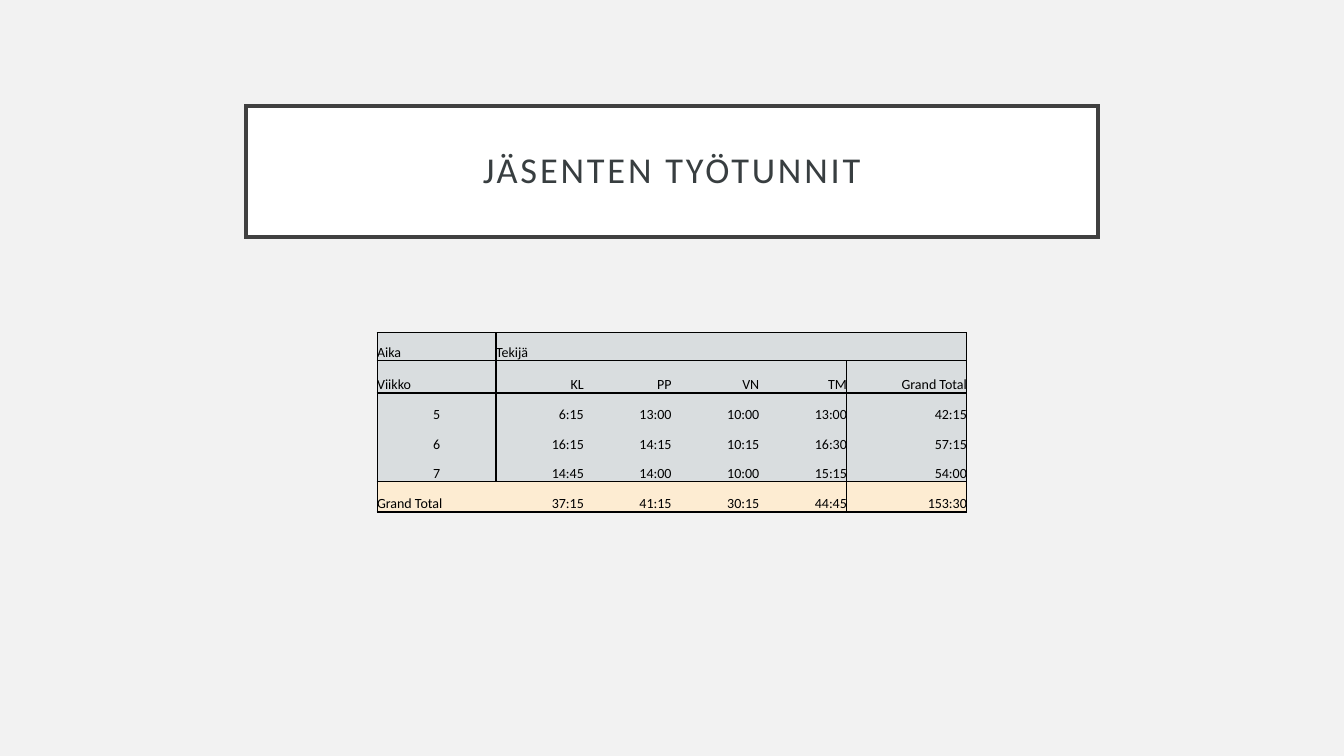
from dataclasses import dataclass

from lxml import etree
from pptx import Presentation
from pptx.dml.color import RGBColor
from pptx.enum.text import MSO_ANCHOR, MSO_AUTO_SIZE, PP_ALIGN
from pptx.oxml.ns import qn
from pptx.slide import Slide
from pptx.table import _Cell
from pptx.util import Inches, Pt

LEFT, CENTER, RIGHT = PP_ALIGN.LEFT, PP_ALIGN.CENTER, PP_ALIGN.RIGHT
MIDDLE, BOTTOM = MSO_ANCHOR.MIDDLE, MSO_ANCHOR.BOTTOM
NO_AUTOFIT = MSO_AUTO_SIZE.NONE

BACKGROUND = RGBColor(0xF2, 0xF2, 0xF2)
WHITE = RGBColor(0xFF, 0xFF, 0xFF)
BLACK = RGBColor(0x00, 0x00, 0x00)
FRAME = RGBColor(0x40, 0x40, 0x40)
TITLE_TEXT = RGBColor(0x38, 0x3E, 0x40)
GREY = RGBColor(0xD9, 0xDD, 0xDF)
CREAM = RGBColor(0xFD, 0xEC, 0xD2)

FONT = "Calibri"
MARGINS = ("margin_left", "margin_right", "margin_top", "margin_bottom")
COLUMN_WIDTHS = (1.18, 0.87, 0.87, 0.87, 0.87, 1.19)
LAST_COLUMN = len(COLUMN_WIDTHS) - 1


@dataclass(frozen=True)
class HoursRow:
    texts: tuple[str, ...]
    height: float
    alignments: tuple[PP_ALIGN, PP_ALIGN] = (CENTER, RIGHT)
    fill: RGBColor = GREY
    horizontal_borders: str = ""
    label_divider: bool = True
    total_divider: bool = True


HOURS_ROWS = (
    HoursRow(("Aika", "Tekijä", "", "", "", ""), 0.28, (LEFT, LEFT),
             horizontal_borders="TB", total_divider=False),
    HoursRow(("Viikko", "KL", "PP", "VN", "TM", "Grand Total"), 0.32, (LEFT, RIGHT),
             horizontal_borders="TB"),
    HoursRow(("5", "6:15", "13:00", "10:00", "13:00", "42:15"), 0.3, horizontal_borders="T"),
    HoursRow(("6", "16:15", "14:15", "10:15", "16:30", "57:15"), 0.3),
    HoursRow(("7", "14:45", "14:00", "10:00", "15:15", "54:00"), 0.28, horizontal_borders="B"),
    HoursRow(("Grand Total", "37:15", "41:15", "30:15", "44:45", "153:30"), 0.3, (LEFT, RIGHT),
             CREAM, "TB", label_divider=False),
)


def apply_format(target: object, values: dict[str, object]) -> None:
    for name, value in values.items():
        setattr(target, name, value)


def border_sides(row: HoursRow, column: int) -> str:
    sides = row.horizontal_borders
    if column == 0 or (column == 1 and row.label_divider) or (
            column == LAST_COLUMN and row.total_divider):
        sides += "L"
    if column == LAST_COLUMN or (column == 0 and row.label_divider) or (
            column == LAST_COLUMN - 1 and row.total_divider):
        sides += "R"
    return sides


def set_borders(cell: _Cell, sides: str) -> None:
    properties = cell._tc.get_or_add_tcPr()
    for position, side in enumerate("LRTB"):
        line = etree.Element(qn(f"a:ln{side}"), w=str(Pt(1)))
        if side in sides:
            fill = etree.SubElement(line, qn("a:solidFill"))
            etree.SubElement(fill, qn("a:srgbClr"), val=str(BLACK))
        else:
            etree.SubElement(line, qn("a:noFill"))
        properties.insert(position, line)


def fill_cell(cell: _Cell, row: HoursRow, column: int) -> None:
    apply_format(cell, {"vertical_anchor": BOTTOM, **dict.fromkeys(MARGINS, Inches(0))})
    cell.fill.solid()
    cell.fill.fore_color.rgb = row.fill
    paragraph = cell.text_frame.paragraphs[0]
    paragraph.alignment = row.alignments[min(column, 1)]
    if row.texts[column]:
        run = paragraph.add_run()
        run.text = row.texts[column]
        apply_format(run.font, {"name": FONT, "size": Pt(10)})
        run.font.color.rgb = BLACK
    else:
        paragraph._p.get_or_add_endParaRPr().set("sz", "1000")
    set_borders(cell, border_sides(row, column))


def add_title(slide: Slide, text: str) -> None:
    title = slide.shapes.title
    apply_format(title, {"left": Inches(2.44), "top": Inches(1.05),
                         "width": Inches(8.45), "height": Inches(1.3)})
    title.fill.solid()
    title.fill.fore_color.rgb = WHITE
    title.line.color.rgb = FRAME
    title.line.width = Pt(2.5)
    etree.SubElement(title.line._ln, qn("a:miter"), lim="800000")
    frame = title.text_frame
    apply_format(frame, {"word_wrap": True, "auto_size": NO_AUTOFIT, "vertical_anchor": MIDDLE,
                         **dict.fromkeys(MARGINS, Inches(0.2))})
    paragraph = frame.paragraphs[0]
    apply_format(paragraph, {"alignment": CENTER, "line_spacing": 0.9})
    run = paragraph.add_run()
    run.text = text
    apply_format(run.font, {"name": FONT, "size": Pt(26)})
    run.font.color.rgb = TITLE_TEXT
    run._r.get_or_add_rPr().set("spc", "200")


def add_hours_table(slide: Slide) -> None:
    table = slide.shapes.add_table(
        len(HOURS_ROWS), len(COLUMN_WIDTHS), Inches(3.74), Inches(3.3),
        Inches(sum(COLUMN_WIDTHS)), Inches(sum(row.height for row in HOURS_ROWS))).table
    apply_format(table, {"first_row": False, "horz_banding": False})
    for column, width in zip(table.columns, COLUMN_WIDTHS):
        column.width = Inches(width)
    for row_index, row in enumerate(HOURS_ROWS):
        table.rows[row_index].height = Inches(row.height)
        for column_index in range(len(COLUMN_WIDTHS)):
            fill_cell(table.cell(row_index, column_index), row, column_index)


def main() -> None:
    presentation = Presentation()
    apply_format(presentation, {"slide_width": Inches(13.33), "slide_height": Inches(7.5)})
    slide = presentation.slides.add_slide(presentation.slide_layouts.get_by_name("Title Only"))
    slide.background.fill.solid()
    slide.background.fill.fore_color.rgb = BACKGROUND
    add_title(slide, "JÄSENTEN TYÖTUNNIT")
    add_hours_table(slide)
    presentation.save("out.pptx")


if __name__ == "__main__":
    main()
